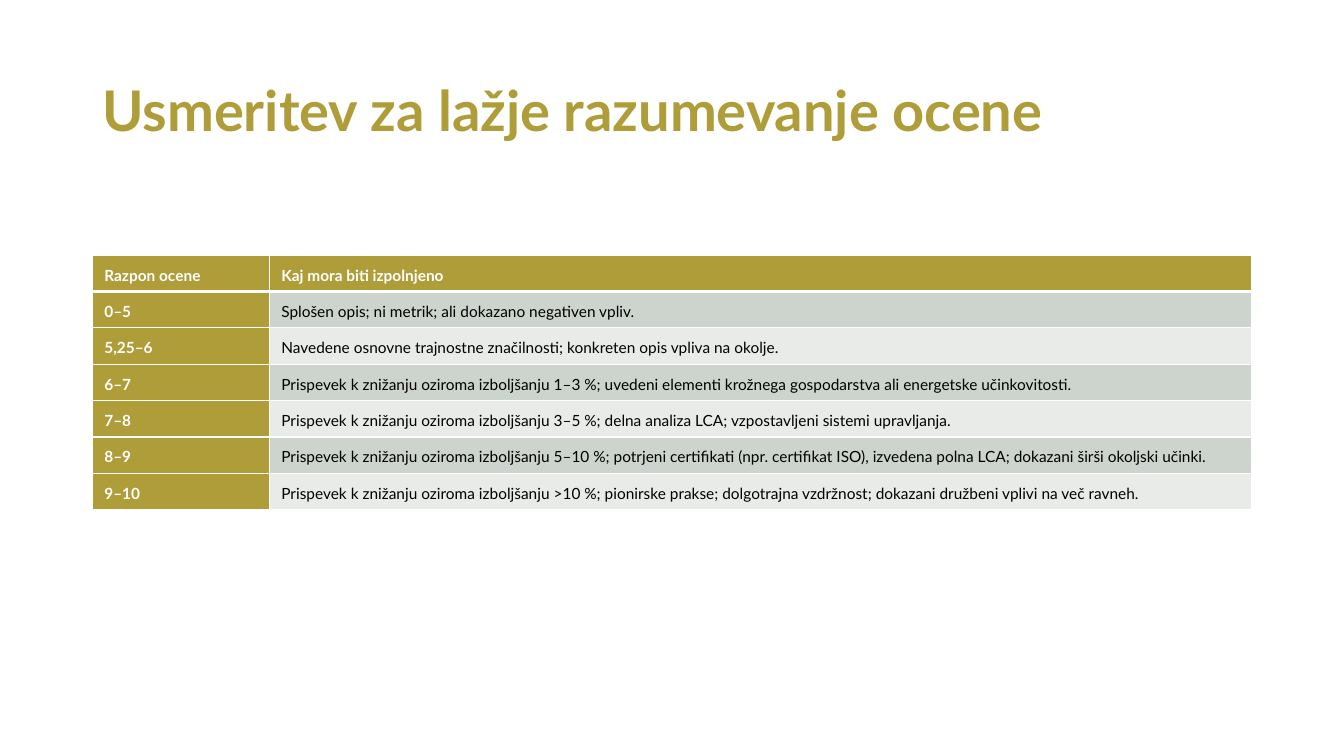
from lxml import etree
from pptx import Presentation
from pptx.dml.color import RGBColor
from pptx.enum.text import MSO_ANCHOR
from pptx.oxml.ns import qn
from pptx.util import Cm, Pt

MIDDLE = MSO_ANCHOR.MIDDLE
FONT = "Lato"
GOLD, WHITE, BLACK = "AE9D39", "FFFFFF", "000000"
BANDS = ("CCD4CD", "E8EBE8")
LEFT = Cm(2.33)
ROW_HEIGHT = Cm(0.9)
COLUMN_WIDTHS = (Cm(4.46), Cm(24.74))

ROWS = [
    ("Razpon ocene", "Kaj mora biti izpolnjeno"),
    ("0–5", "Splošen opis; ni metrik; ali dokazano negativen vpliv."),
    ("5,25–6", "Navedene osnovne trajnostne značilnosti; konkreten opis vpliva na okolje."),
    ("6–7", "Prispevek k znižanju oziroma izboljšanju 1–3 %; uvedeni elementi "
            "krožnega gospodarstva ali energetske učinkovitosti."),
    ("7–8", "Prispevek k znižanju oziroma izboljšanju 3–5 %; delna analiza LCA; "
            "vzpostavljeni sistemi upravljanja."),
    ("8–9", "Prispevek k znižanju oziroma izboljšanju 5–10 %; potrjeni certifikati "
            "(npr. certifikat ISO), izvedena polna LCA; dokazani širši okoljski učinki."),
    ("9–10", "Prispevek k znižanju oziroma izboljšanju >10 %; pionirske prakse; "
             "dolgotrajna vzdržnost; dokazani družbeni vplivi na več ravneh."),
]


def color(value):
    return RGBColor.from_string(value)


def write_text(frame, text, size, text_color, bold, line_spacing):
    paragraph = frame.paragraphs[0]
    paragraph.text = text
    paragraph.line_spacing = line_spacing
    font = paragraph.font
    font.name, font.size, font.bold = FONT, Pt(size), bold
    font.color.rgb = color(text_color)
    return paragraph


def add_title(slide, text):
    box = slide.shapes.add_textbox(LEFT, Cm(1), Cm(27.9), Cm(3.7))
    box.text_frame.word_wrap = True
    box.text_frame.vertical_anchor = MIDDLE
    write_text(box.text_frame, text, 40, GOLD, True, 0.9)


def set_borders(cell, top, bottom):
    properties = cell._tc.get_or_add_tcPr()
    for side, width in (("L", 1), ("R", 1), ("T", top), ("B", bottom)):
        line = etree.SubElement(properties, qn(f"a:ln{side}"), w=str(Pt(width)))
        fill = etree.SubElement(line, qn("a:solidFill"))
        etree.SubElement(fill, qn("a:srgbClr"), val=WHITE)


def fill_cell(cell, text, row, column):
    is_heading = row == 0 or column == 0
    cell.margin_left, cell.margin_right = Cm(0.3), Cm(0.2)
    cell.margin_top, cell.margin_bottom = Cm(0.2), Cm(0.18)
    # The rule below the header row is thicker
    set_borders(cell, top=3 if row == 1 else 1, bottom=3 if row == 0 else 1)
    cell.fill.solid()
    cell.fill.fore_color.rgb = color(GOLD if is_heading else BANDS[(row - 1) % 2])
    text_color = WHITE if is_heading else BLACK
    paragraph = write_text(cell.text_frame, text, 11, text_color, is_heading, 1.15)
    paragraph.space_after = Pt(10)


def add_score_table(slide):
    frame = slide.shapes.add_table(len(ROWS), len(COLUMN_WIDTHS), LEFT, Cm(6.43),
                                   sum(COLUMN_WIDTHS), ROW_HEIGHT * len(ROWS))
    table = frame.table
    for column, width in zip(table.columns, COLUMN_WIDTHS):
        column.width = width
    for row, texts in enumerate(ROWS):
        table.rows[row].height = ROW_HEIGHT
        for column, text in enumerate(texts):
            fill_cell(table.cell(row, column), text, row, column)


def main():
    presentation = Presentation()
    presentation.slide_width, presentation.slide_height = Cm(33.87), Cm(19.05)
    slide = presentation.slides.add_slide(presentation.slide_layouts[6])
    add_title(slide, "Usmeritev za lažje razumevanje ocene")
    add_score_table(slide)
    presentation.save("out.pptx")


if __name__ == "__main__":
    main()
